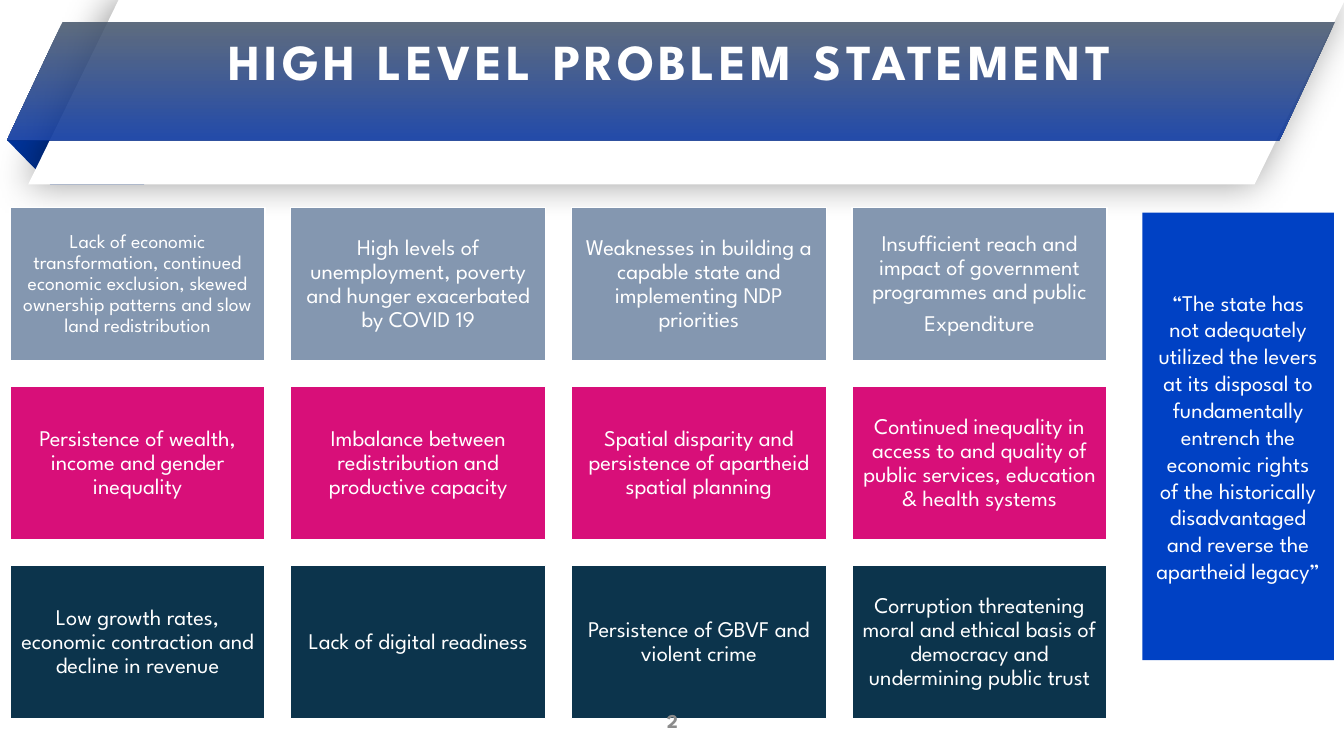
"""Builds the problem statement slide: ribbon title, grid of issues and a quote."""
from pptx import Presentation
from pptx.dml.color import RGBColor
from pptx.enum.shapes import MSO_SHAPE as SHAPE
from pptx.enum.text import MSO_ANCHOR as ANCHOR, PP_ALIGN as ALIGN
from pptx.oxml import parse_xml
from pptx.oxml.ns import nsdecls, qn
from pptx.util import Inches, Pt
from lxml.etree import SubElement

COLORS = {
    "white": "FFFFFF", "fold": "003399", "slate": "44546A", "navy": "002E9C",
    "grey_blue": "8497B0", "pink": "D80F79", "dark_teal": "0C344C",
    "quote": "0041C4", "number": "8C8C8C", "shadow": "000000",
}

ISSUES = [
    ("grey_blue", [
        "Lack of economic transformation, continued economic exclusion, "
        "skewed ownership patterns and slow land redistribution",
        "High levels of unemployment, poverty and hunger exacerbated by COVID 19",
        "Weaknesses in building a capable state and implementing NDP priorities",
        "Insufficient reach and impact of government programmes and public\nExpenditure",
    ]),
    ("pink", [
        "Persistence of wealth, income and gender inequality",
        "Imbalance between redistribution and productive capacity",
        "Spatial disparity and persistence of apartheid spatial planning",
        "Continued inequality in access to and quality of public services, "
        "education & health systems",
    ]),
    ("dark_teal", [
        "Low growth rates, economic contraction and decline in revenue",
        "Lack of digital readiness",
        "Persistence of GBVF and violent crime",
        "Corruption threatening moral and ethical basis of democracy and "
        "undermining public trust",
    ]),
]

QUOTE = """“The state has
not adequately
utilized the levers
at its disposal to
fundamentally
entrench the
economic rights
of the historically
disadvantaged
and reverse the
apartheid legacy”"""


class SlideBuilder:
    """Holds the style and the current slide."""

    font = "League Spartan"

    def __init__(self, prs):
        self.s = prs.slides.add_slide(prs.slide_layouts[6])

    def color(self, name):
        return RGBColor.from_string(COLORS[name])

    def paint(self, sp, fill, line=None):
        sp.shadow.inherit = False
        sp.fill.solid()
        sp.fill.fore_color.rgb = self.color(fill)
        if line:
            sp.line.color.rgb = self.color(line)
            sp.line.width = Pt(1)
        else:
            sp.line.fill.background()

    def shape(self, kind, box, fill, line=None, slant=None):
        sp = self.s.shapes.add_shape(kind, *map(Inches, box))
        self.paint(sp, fill, line)
        if slant is not None:
            sp.adjustments[0] = slant
        return sp

    def outline(self, points, fill):
        start, *rest = [(Inches(x), Inches(y)) for x, y in points]
        builder = self.s.shapes.build_freeform(*start)
        builder.add_line_segments(rest, close=True)
        self.paint(builder.convert_to_shape(), fill)

    def gradient(self, sp, names, alpha):
        sp.fill.gradient()
        sp.fill.gradient_angle = 270
        for stop, name, position in zip(sp.fill.gradient_stops, names, (0, 1)):
            stop.color.rgb = self.color(name)
            stop.position = position
        for clr in sp._element.spPr.find(qn("a:gradFill")).iter(qn("a:srgbClr")):
            SubElement(clr, qn("a:alpha")).set("val", str(alpha * 1000))

    def soft_shadow(self, sp, alpha, blur, distance, angle):
        effects = sp._element.spPr.find(qn("a:effectLst"))
        effects.append(parse_xml(
            f'<a:outerShdw {nsdecls("a")} blurRad="{Pt(blur)}" dist="{Pt(distance)}" '
            f'dir="{angle * 60000}" algn="ctr" rotWithShape="0">'
            f'<a:srgbClr val="{COLORS["shadow"]}"><a:alpha val="{alpha * 1000}"/>'
            f'</a:srgbClr></a:outerShdw>'))

    def label(self, sp, text, size, color="white", bold=False, anchor=ANCHOR.MIDDLE,
              inset=None, line_spacing=None, after=0, tracking=None):
        tf = sp.text_frame
        tf.word_wrap = True
        tf.vertical_anchor = anchor
        if inset is not None:
            tf.margin_left = tf.margin_right = Inches(inset)
            tf.margin_top = tf.margin_bottom = Inches(inset)
        tf.text = text
        for p in tf.paragraphs:
            p.alignment = ALIGN.CENTER
            p.line_spacing = line_spacing
            p.space_after = Pt(after)
            p.font.name = self.font
            p.font.size = Pt(size)
            p.font.bold = bold
            p.font.color.rgb = self.color(color)
            if tracking:
                for r in p.runs:
                    r._r.get_or_add_rPr().set("spc", str(tracking * 100))

    def text_box(self, box, text, size, **style):
        sp = self.s.shapes.add_textbox(*map(Inches, box))
        self.label(sp, text, size, **style)


def main():
    prs = Presentation()
    prs.slide_width, prs.slide_height = Inches(13.33), Inches(7.5)
    slide = SlideBuilder(prs)

    slide.outline([(0.07, 1.39), (1.43, 1.39), (1.43, 1.83), (0.5, 1.83)], "fold")
    backing = slide.shape(SHAPE.PARALLELOGRAM, (0.28, 0, 13.06, 1.83), "white", slant=0.49)
    slide.soft_shadow(backing, alpha=40, blur=27, distance=3, angle=195)
    ribbon = slide.shape(SHAPE.PARALLELOGRAM, (0.07, 0.22, 13.17, 1.17), "navy", slant=0.47)
    slide.gradient(ribbon, ("slate", "navy"), alpha=85)
    slide.text_box((0.49, 0.25, 12.32, 0.71), "HIGH LEVEL PROBLEM STATEMENT", 36,
                   bold=True, anchor=ANCHOR.TOP, tracking=3)

    left, top, width, height = 0.1, 2.06, 2.53, 1.52
    column_step, row_step = (8.45 - left) / 3, (5.61 - top) / 2
    for row, (fill, issues) in enumerate(ISSUES):
        for column, issue in enumerate(issues):
            box = (left + column * column_step, top + row * row_step, width, height)
            sp = slide.shape(SHAPE.RECTANGLE, box, fill, line="white")
            size = 14 if len(issue) > 100 else 16
            slide.label(sp, issue, size, inset=0.07, line_spacing=0.9, after=0.35 * size)

    panel = slide.shape(SHAPE.RECTANGLE, (11.33, 2.11, 1.9, 4.44), "quote")
    slide.label(panel, QUOTE, 16)
    slide.text_box((5.17, 6.95, 3, 0.4), "2", 14, color="number", bold=True)

    prs.save("out.pptx")


if __name__ == "__main__":
    main()
